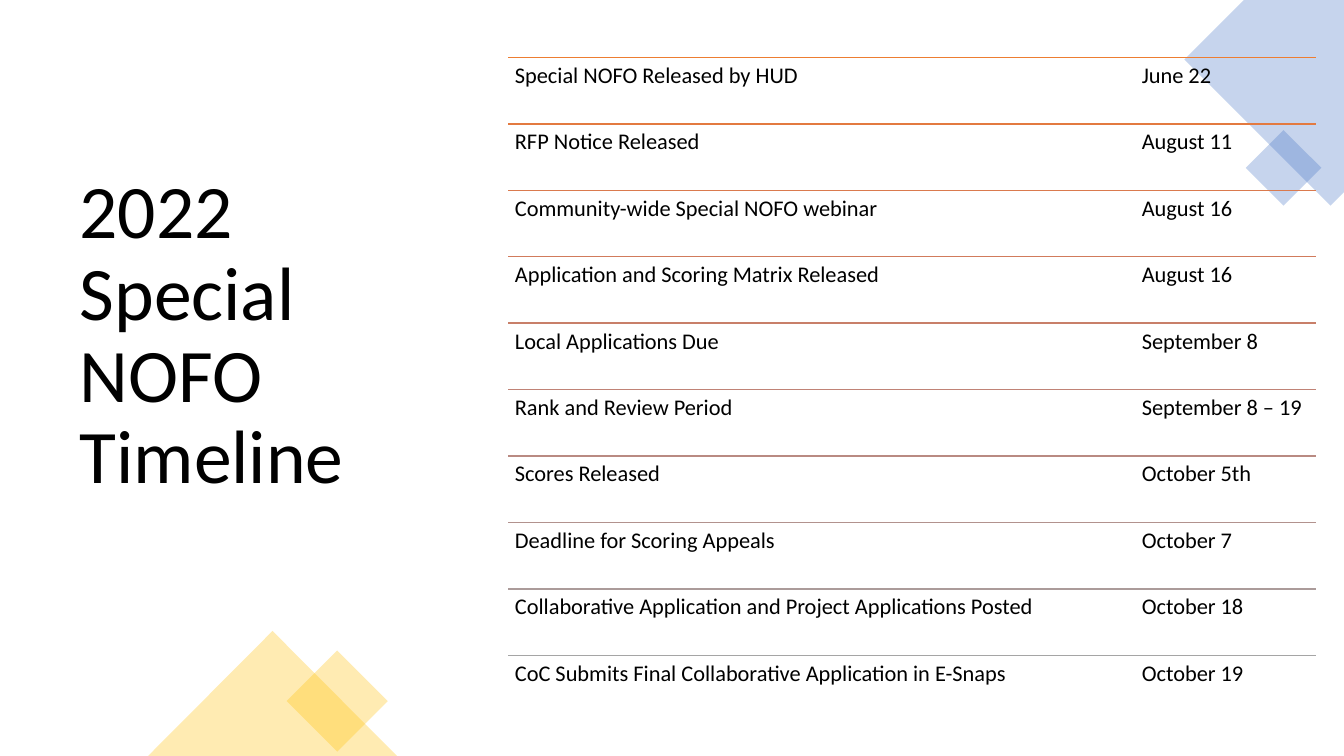
"""Build the 2022 Special NOFO timeline slide."""
from lxml.etree import SubElement
from pptx import Presentation
from pptx.dml.color import RGBColor as RGB
from pptx.enum.shapes import MSO_CONNECTOR as Link, MSO_SHAPE as Kind
from pptx.enum.text import MSO_ANCHOR as Anchor, MSO_AUTO_SIZE as Fit, PP_ALIGN as Align
from pptx.oxml.ns import qn
from pptx.util import Pt

BLACK = RGB(0x00, 0x00, 0x00)
BLUE = RGB(0x44, 0x72, 0xC4)
GOLD = RGB(0xFF, 0xC0, 0x00)
ORANGE = RGB(0xED, 0x7D, 0x31)
RUST = RGB(0xE3, 0x7A, 0x40)
COPPER = RGB(0xDA, 0x7A, 0x4E)
CLAY = RGB(0xD1, 0x7B, 0x5C)
BRICK = RGB(0xC8, 0x7F, 0x69)
ROSE = RGB(0xC0, 0x83, 0x76)
DUSK = RGB(0xB9, 0x8A, 0x82)
MAUVE = RGB(0xB2, 0x92, 0x8E)
ASH = RGB(0xAB, 0x9B, 0x9A)
GRAY = RGB(0xA5, 0xA5, 0xA5)

LEFT, TOP, WIDTH, STEP = 363, 41, 576.7, 47.45
DATE = 447.8
STEPS = [
    ("Special NOFO Released by HUD", "June 22", ORANGE),
    ("RFP Notice Released", "August 11", RUST),
    ("Community-wide Special NOFO webinar", "August 16", COPPER),
    ("Application and Scoring Matrix Released", "August 16", CLAY),
    ("Local Applications Due", "September 8", BRICK),
    ("Rank and Review Period", "September 8 – 19", ROSE),
    ("Scores Released", "October 5th", DUSK),
    ("Deadline for Scoring Appeals", "October 7", MAUVE),
    ("Collaborative Application and Project Applications Posted", "October 18", ASH),
    ("CoC Submits Final Collaborative Application in E-Snaps", "October 19", GRAY),
]


class Deck:
    font = "Calibri"
    alpha = 30

    def __init__(self, wide, high):
        self.prs = Presentation()
        self.prs.slide_width, self.prs.slide_height = Pt(wide), Pt(high)
        self.slide = self.prs.slides.add_slide(self.prs.slide_layouts[5])
        self.shapes = self.slide.shapes

    def label(self, frame, text, size):
        frame.word_wrap = True
        frame.auto_size = Fit.NONE
        frame.text = text
        para = frame.paragraphs[0]
        para.alignment = Align.LEFT
        para.line_spacing = 0.9
        for run in para.runs:
            run.font.name = self.font
            run.font.size = Pt(size)
            run.font.color.rgb = BLACK
        return para

    def title(self, text, x, y, w, h, size, foot):
        box = self.shapes.title
        box.left, box.top, box.width, box.height = Pt(x), Pt(y), Pt(w), Pt(h)
        frame = box.text_frame
        frame.vertical_anchor = Anchor.MIDDLE
        frame.margin_bottom = Pt(foot)
        self.label(frame, text, size)

    def tint(self, shape, color):
        shape.shadow.inherit = False
        shape.line.fill.background()
        shape.fill.solid()
        shape.fill.fore_color.rgb = color
        node = shape._element.spPr.find(".//" + qn("a:srgbClr"))
        SubElement(node, qn("a:alpha"), val=str(self.alpha * 1000))

    def shape(self, kind, x, y, w, h, color, turn=0):
        item = self.shapes.add_shape(kind, Pt(x), Pt(y), Pt(w), Pt(h))
        item.rotation = turn
        self.tint(item, color)

    def outline(self, points, color):
        spots = [(Pt(x), Pt(y)) for x, y in points]
        form = self.shapes.build_freeform(*spots[0])
        form.add_line_segments(spots[1:], close=True)
        self.tint(form.convert_to_shape(), color)

    def rule(self, x, y, w, color):
        line = self.shapes.add_connector(Link.STRAIGHT, Pt(x), Pt(y), Pt(x + w), Pt(y))
        line.line.color.rgb = color
        line.line.width = Pt(1)
        SubElement(line._element.spPr, qn("a:effectLst"))

    def entry(self, text, x, y, w, h, stop):
        frame = self.shapes.add_textbox(Pt(x), Pt(y), Pt(w), Pt(h)).text_frame
        frame.margin_left = frame.margin_right = Pt(4.8)
        frame.margin_top = frame.margin_bottom = Pt(4.8)
        para = self.label(frame, text, 16)
        para.space_after = Pt(5.6)
        tabs = SubElement(para._p.get_or_add_pPr(), qn("a:tabLst"))
        SubElement(tabs, qn("a:tab"), pos=str(Pt(stop)), algn="l")

    def save(self):
        self.prs.save("out.pptx")


def main():
    deck = Deck(960, 540)
    deck.outline([(960, 0), (888.5, 0), (846, 42.5), (950.4, 146.9), (960, 137.3)], BLUE)
    deck.shape(Kind.RECTANGLE, 897.8, 100.8, 38.2, 38.2, BLUE, 315)
    deck.shape(Kind.RECTANGLE, 215.3, 475.2, 51.1, 51.1, GOLD, 45)
    deck.shape(Kind.ISOSCELES_TRIANGLE, 105.8, 450.7, 177.8, 89.3, GOLD)
    deck.title("2022 Special NOFO Timeline", 49.7, 50.4, 269.3, 439.9, 54, 63)
    for i, (task, day, color) in enumerate(STEPS):
        y = TOP + i * STEP
        deck.rule(LEFT, y, WIDTH, color)
        deck.entry(f"{task}\t{day}", LEFT, y, WIDTH, STEP, DATE)
    deck.save()


if __name__ == "__main__":
    main()
